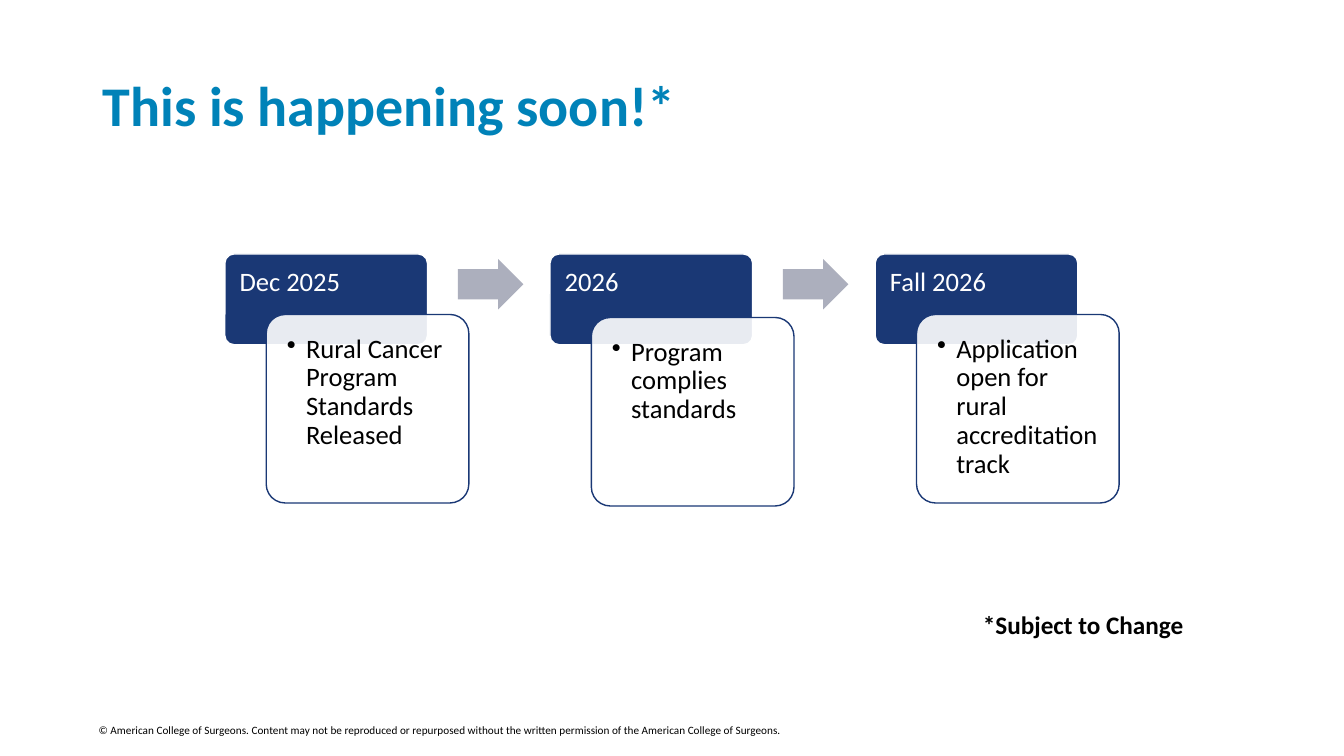
from dataclasses import dataclass
from lxml import etree
from pptx import Presentation
from pptx import util as u
from pptx.dml.color import RGBColor
from pptx.enum import shapes, text
from pptx.oxml.ns import qn

# Content: date, step, extra drop of the card
TITLE = "This is happening soon!*"
STEPS = [
    ("Dec 2025", "Rural Cancer Program Standards Released", 0),
    ("2026", "Program complies standards", 0.03),
    ("Fall 2026", "Application open for rural accreditation track", 0),
]
NOTE = "*Subject to Change"
RIGHTS = ("© American College of Surgeons. Content may not be reproduced or "
          "repurposed without the written permission of the American College of Surgeons.")


@dataclass(frozen=True)
class Theme:
    font: str = "Calibri"
    title: str = "0082B8"
    navy: str = "1A3875"
    arrow: str = "ACAFBD"
    white: str = "FFFFFF"
    black: str = "000000"
    head: int = 40
    step: int = 19
    note: int = 18
    small: int = 8


T = Theme()

# Grid in inches
WIDE, HIGH = 13.33, 7.5
LEFT, TOP, PITCH = 2.23, 2.52, 3.225
TAB = (2.01, 0.9)
CARD = (2.01, 1.87)
SHIFT = (0.41, 0.6)
ARROW = (0.65, 0.5)
ARROW_SHIFT = (2.31, 0.05)
INDENT = 0.19


def rgb(code):
    return RGBColor.from_string(code)


def write(frame, words, size, color, bold=False, space=None):
    frame.word_wrap = True
    par = frame.paragraphs[0]
    par.text = words
    par.alignment = text.PP_ALIGN.LEFT
    if space:
        par.line_spacing = space
    font = par.font
    font.name, font.size, font.bold = T.font, u.Pt(size), bold
    font.color.rgb = rgb(color)


def shape(kind, x, y, size, fill, line=None):
    item = slide.shapes.add_shape(kind, *map(u.Inches, (x, y, *size)))
    item.shadow.inherit = False
    item.fill.solid()
    item.fill.fore_color.rgb = rgb(fill)
    if line:
        item.line.color.rgb = rgb(line)
        item.line.width = u.Pt(1)
    else:
        item.line.fill.background()
    return item


def panel(x, y, size, fill, line, words, color, pad):
    item = shape(shapes.MSO_SHAPE.ROUNDED_RECTANGLE, x, y, size, fill, line)
    item.adjustments[0] = 0.1
    frame = item.text_frame
    frame.vertical_anchor = text.MSO_ANCHOR.TOP
    frame.margin_left = frame.margin_right = u.Inches(pad)
    frame.margin_top = frame.margin_bottom = u.Inches(pad)
    write(frame, words, T.step, color, space=0.9)
    return item


def bullet(par):
    props = par._p.get_or_add_pPr()
    props.set("marL", str(u.Inches(INDENT)))
    props.set("indent", str(-u.Inches(INDENT)))
    etree.SubElement(props, qn("a:buChar")).set("char", "•")


def fade(item, share):
    color = item.fill._xPr.find(qn("a:solidFill"))[0]
    etree.SubElement(color, qn("a:alpha")).set("val", str(share * 1000))


def label(x, y, w, h, words, size, bold=False):
    box = slide.shapes.add_textbox(*map(u.Inches, (x, y, w, h)))
    write(box.text_frame, words, size, T.black, bold)


deck = Presentation()
deck.slide_width, deck.slide_height = u.Inches(WIDE), u.Inches(HIGH)
slide = deck.slides.add_slide(deck.slide_layouts[5])

# Title
title = slide.shapes.title
title.left, title.top, title.width, title.height = map(u.Inches, (0.92, 0.59, 11.5, 0.97))
title.text_frame.vertical_anchor = text.MSO_ANCHOR.MIDDLE
write(title.text_frame, TITLE, T.head, T.title, True, 0.9)

# Timeline: date tab, card over it, arrow to the next step
for i, (date, step, drop) in enumerate(STEPS):
    x = LEFT + i * PITCH
    panel(x, TOP, TAB, T.navy, T.white, date, T.white, 0.12)
    card = panel(x + SHIFT[0], TOP + SHIFT[1] + drop, CARD,
                 T.white, T.navy, step, T.black, 0.15)
    bullet(card.text_frame.paragraphs[0])
    fade(card, 90)
    if i < len(STEPS) - 1:
        arrow = shape(shapes.MSO_SHAPE.RIGHT_ARROW, x + ARROW_SHIFT[0],
                      TOP + ARROW_SHIFT[1], ARROW, T.arrow)
        arrow.adjustments[0] = 0.6

# Note and rights line
label(9.65, 6, 2.44, 0.4, NOTE, T.note, True)
label(0.88, 7.13, 11.5, 0.24, RIGHTS, T.small)

deck.save("out.pptx")
